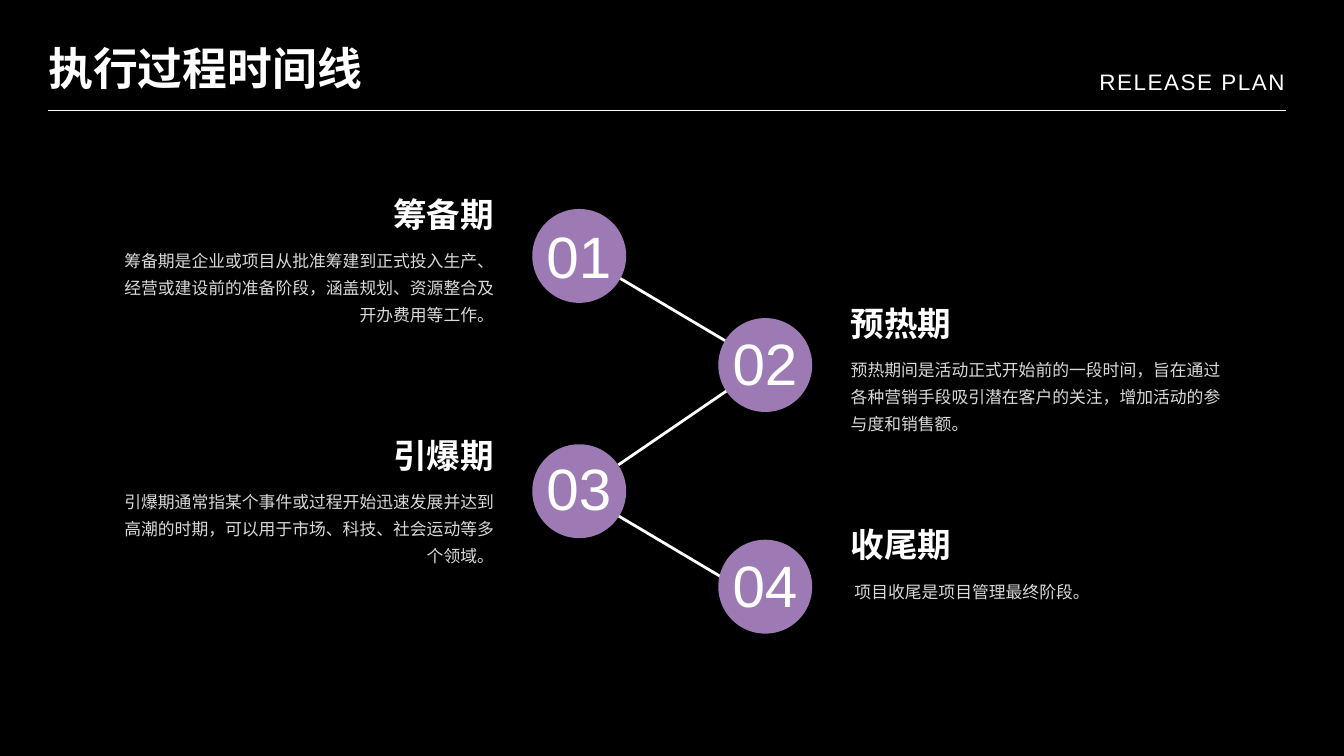
from lxml.etree import SubElement
from pptx import Presentation
from pptx.dml.color import RGBColor
from pptx.enum.shapes import MSO_CONNECTOR, MSO_SHAPE
from pptx.enum.text import MSO_AUTO_SIZE, PP_ALIGN
from pptx.oxml.ns import qn
from pptx.util import Pt

COLORS = {"background": "000000", "white": "FFFFFF", "body": "D9D9D9", "purple": "9E7AB5"}
CJK, LATIN = "Noto Sans CJK SC", "Arial"
LEFT, RIGHT, CENTER = PP_ALIGN.LEFT, PP_ALIGN.RIGHT, PP_ALIGN.CENTER

DIAMETER = 100.6
CENTER_X = {"left": 620.6, "right": 819.9}
BODY_OFFSET = 67.7

# number, side, circle top, number top, heading top, body height, heading, body
STAGES = [
    ("01", "left", 223.9, 223.2, 193.7, 86.4, "筹备期",
     "筹备期是企业或项目从批准筹建到正式投入生产、经营或建设前的准备阶段，涵盖规划、资源整合及开办费用等工作。"),
    ("02", "right", 340.8, 338.4, 310.5, 86.4, "预热期",
     "预热期间是活动正式开始前的一段时间，旨在通过各种营销手段吸引潜在客户的关注，增加活动的参与度和销售额。"),
    ("03", "left", 476, 472.3, 452.2, 86.4, "引爆期",
     "引爆期通常指某个事件或过程开始迅速发展并达到高潮的时期，可以用于市场、科技、社会运动等多个领域。"),
    ("04", "right", 578.3, 576.7, 547.9, 28.8, "收尾期",
     " 项目收尾是项目管理最终阶段。"),
]
LINKS = [
    (620.6, 272.2, 776.9, 365),
    (620.6, 527.8, 776.9, 620.6),
    (662.4, 498.2, 778.3, 419),
]


def color(name):
    return RGBColor.from_string(COLORS[name])


def write_text(frame, text, *, size, line_height, font=CJK, fill="white",
               bold=False, align=LEFT, tracking=None):
    paragraph = frame.paragraphs[0]
    paragraph.alignment = align
    paragraph.line_spacing = Pt(line_height)
    run = paragraph.add_run()
    run.text = text
    run.font.size = Pt(size)
    run.font.bold = bold
    run.font.color.rgb = color(fill)
    run.font.name = font
    properties = run.font._element
    SubElement(properties, qn("a:ea")).set("typeface", font)
    if tracking:
        properties.set("spc", str(round(tracking * 100)))


class TimelineSlide:
    def __init__(self, presentation):
        self.slide = presentation.slides.add_slide(presentation.slide_layouts[6])
        self.slide.background.fill.solid()
        self.slide.background.fill.fore_color.rgb = color("background")

    def line(self, x1, y1, x2, y2, width):
        connector = self.slide.shapes.add_connector(
            MSO_CONNECTOR.STRAIGHT, Pt(x1), Pt(y1), Pt(x2), Pt(y2))
        connector.line.color.rgb = color("white")
        connector.line.width = Pt(width)
        SubElement(connector._element.spPr, qn("a:effectLst"))

    def circle(self, center_x, top):
        shape = self.slide.shapes.add_shape(
            MSO_SHAPE.OVAL, Pt(center_x - DIAMETER / 2), Pt(top), Pt(DIAMETER), Pt(DIAMETER))
        shape.shadow.inherit = False
        shape.fill.solid()
        shape.fill.fore_color.rgb = color("purple")
        shape.line.fill.background()

    def text(self, text, left, top, width, height, **style):
        box = self.slide.shapes.add_textbox(Pt(left), Pt(top), Pt(width), Pt(height))
        frame = box.text_frame
        frame.margin_left = frame.margin_top = frame.margin_right = frame.margin_bottom = 0
        frame.word_wrap = True
        frame.auto_size = MSO_AUTO_SIZE.SHAPE_TO_FIT_TEXT
        write_text(frame, text, **style)

    def stage(self, number, side, circle_top, number_top, top, body_height, heading, body):
        center_x = CENTER_X[side]
        self.circle(center_x, circle_top)
        self.text(number, center_x - 36, number_top, 71.4, 85.7,
                  size=62.5, line_height=87.2, font=LATIN, align=CENTER)
        # Left stages end at a shared right edge, right stages start at a shared left edge
        if side == "left":
            heading_left, body_left, body_width, align = 222.5, 126, 403.2, RIGHT
        else:
            heading_left, body_left, body_width, align = 911.5, 911.5, 410.4, LEFT
        self.text(heading, heading_left, top, 306.7, 56.9,
                  size=36, line_height=56.9, bold=True, align=align)
        self.text(body, body_left, top + BODY_OFFSET, body_width, body_height,
                  size=18, line_height=28.9, fill="body", align=align)


def main():
    presentation = Presentation()
    presentation.slide_width, presentation.slide_height = Pt(1440), Pt(810)
    timeline = TimelineSlide(presentation)

    # Header
    timeline.line(51.8, 118.1, 1377.4, 118.1, 0.75)
    timeline.text("执行过程时间线", 51.8, 33.8, 532.1, 67, size=48, line_height=67.2, bold=True)
    timeline.text("RELEASE PLAN", 583.9, 67.7, 792.7, 32.4,
                  size=24, line_height=33.6, font=LATIN, align=RIGHT, tracking=1.7)

    # Links lie behind the circles
    for link in LINKS:
        timeline.line(*link, 3)

    # Stages
    for stage in STAGES:
        timeline.stage(*stage)

    presentation.save("out.pptx")


if __name__ == "__main__":
    main()
